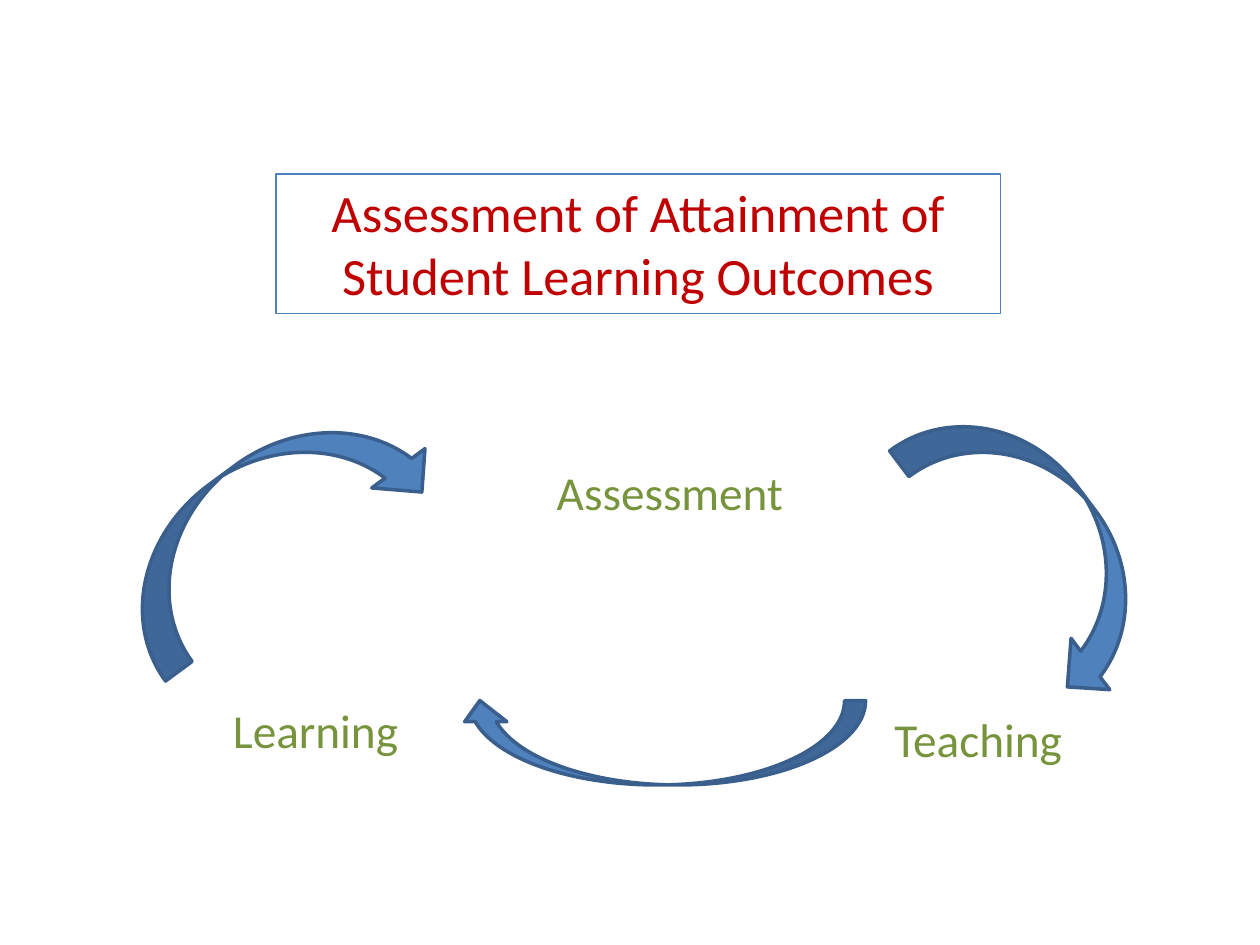
from dataclasses import dataclass

import pptx
import pptx.dml.color
import pptx.enum.shapes
import pptx.enum.text
import pptx.util
from pptx.util import Inches

RED = pptx.dml.color.RGBColor(0xC0, 0x00, 0x00)
GREEN = pptx.dml.color.RGBColor(0x77, 0x93, 0x3C)
BLUE = pptx.dml.color.RGBColor(0x4F, 0x81, 0xBD)
DARK_BLUE = pptx.dml.color.RGBColor(0x3A, 0x5F, 0x8C)
FONT = "Calibri"


@dataclass(frozen=True)
class Box:
    left: float
    top: float
    width: float
    height: float

    def lengths(self) -> tuple:
        return tuple(Inches(v) for v in (self.left, self.top, self.width, self.height))


@dataclass(frozen=True)
class Stage:
    name: str
    box: Box


@dataclass(frozen=True)
class CycleArrow:
    box: Box
    rotation: float


TITLE_LINES = ["Assessment of Attainment of", "Student Learning Outcomes"]
TITLE_BOX = Box(2.19, 1.38, 5.75, 1.11)

CYCLE_ARROWS = [
    CycleArrow(Box(6.95, 3.8, 2.6, 1.02), 53),  # Assessment to Teaching
    CycleArrow(Box(0.73, 3.63, 2.79, 1.05), 323.6),  # Learning to Assessment
    CycleArrow(Box(3.64, 5.56, 3.23, 0.67), 180),  # Teaching to Learning
]

STAGES = [
    Stage("Teaching", Box(7, 5.59, 1.54, 0.56)),
    Stage("Learning", Box(1.75, 5.52, 1.52, 0.56)),
    Stage("Assessment", Box(4.32, 3.63, 2.01, 0.56)),
]


def add_text(slide, lines: list[str], box: Box, *, size: float, color,
             align=pptx.enum.text.PP_ALIGN.LEFT, wrap: bool = False):
    """Add a text box with one paragraph per line."""
    text_box = slide.shapes.add_textbox(*box.lengths())
    frame = text_box.text_frame
    frame.word_wrap = wrap
    frame.auto_size = pptx.enum.text.MSO_AUTO_SIZE.SHAPE_TO_FIT_TEXT
    frame.text = "\n".join(lines)
    for paragraph in frame.paragraphs:
        paragraph.alignment = align
        for run in paragraph.runs:
            run.font.name = FONT
            run.font.size = pptx.util.Pt(size)
            run.font.color.rgb = color
    return text_box


def add_cycle_arrow(slide, arrow: CycleArrow) -> None:
    curve = slide.shapes.add_shape(
        pptx.enum.shapes.MSO_SHAPE.CURVED_DOWN_ARROW, *arrow.box.lengths())
    curve.rotation = arrow.rotation
    curve.shadow.inherit = False
    curve.fill.solid()
    curve.fill.fore_color.rgb = BLUE
    curve.line.color.rgb = DARK_BLUE
    curve.line.width = pptx.util.Pt(2)


def main() -> None:
    deck = pptx.Presentation()
    deck.slide_width, deck.slide_height = Inches(10), Inches(7.5)
    slide = deck.slides.add_slide(deck.slide_layouts[6])

    # Framed title
    title = add_text(slide, TITLE_LINES, TITLE_BOX, size=30, color=RED,
                     align=pptx.enum.text.PP_ALIGN.CENTER, wrap=True)
    title.line.color.rgb = BLUE
    title.line.width = pptx.util.Pt(0.75)

    # Cycle of arrows and stages
    for arrow in CYCLE_ARROWS:
        add_cycle_arrow(slide, arrow)
    for stage in STAGES:
        add_text(slide, [stage.name], stage.box, size=27, color=GREEN)

    deck.save("out.pptx")


if __name__ == "__main__":
    main()
